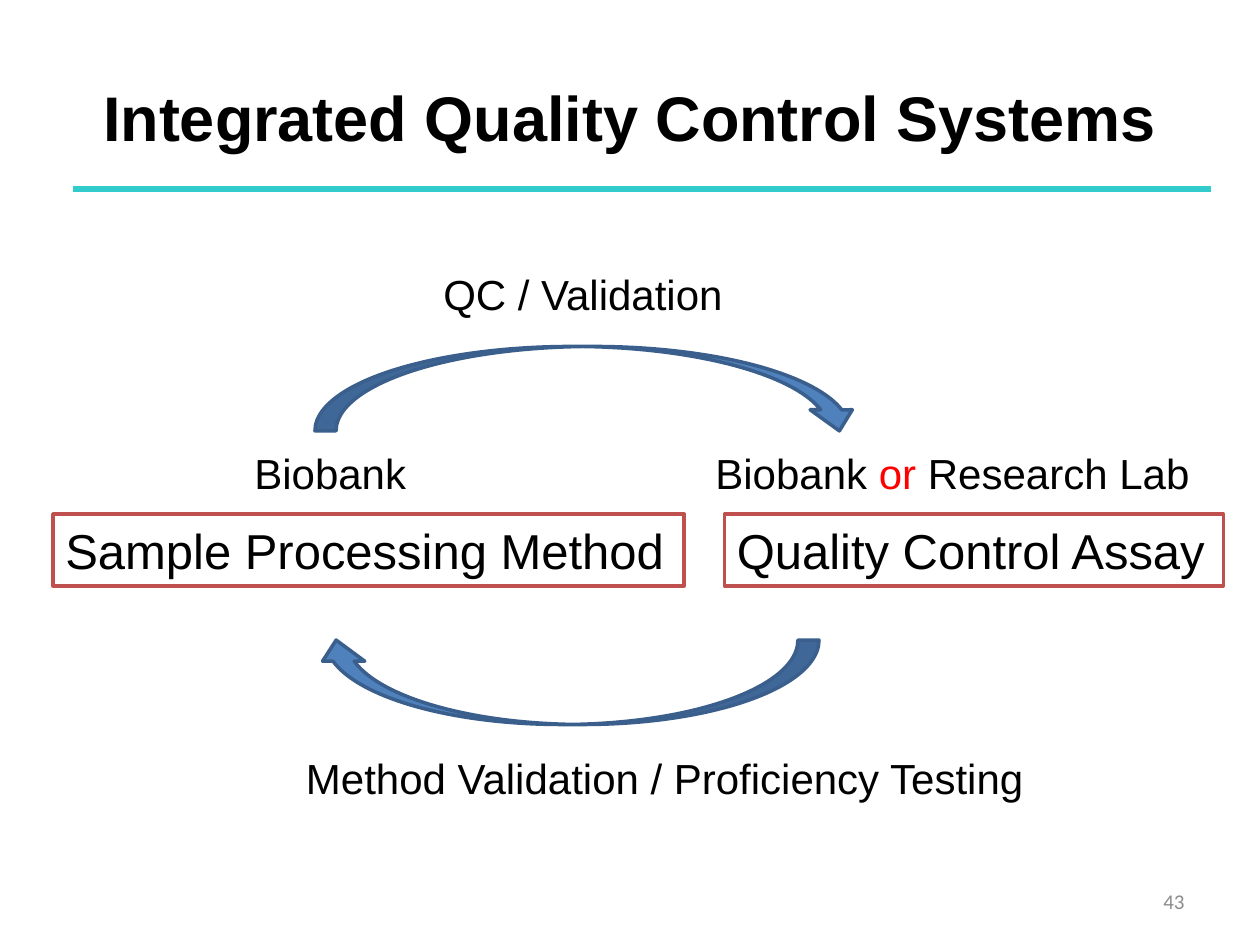
from typing import NamedTuple

from lxml import etree
from pptx import Presentation
from pptx.dml.color import RGBColor
from pptx.enum import shapes, text
from pptx.oxml.ns import qn
from pptx.util import Inches, Pt

COLORS = {
    "black": "000000", "white": "FFFFFF", "red": "FF0000", "gray": "8C8C8C",
    "rule": "33CCCC", "frame": "C0504D", "arrow": "4F81BD", "arrow_edge": "3A5F8C",
}


class Run(NamedTuple):
    text: str
    color: str = "black"


class Label(NamedTuple):
    box: tuple[float, float, float, float]
    runs: list[Run]
    size: int = 24
    font: str = "Arial"
    bold: bool = False
    align: text.PP_ALIGN = text.PP_ALIGN.LEFT
    anchor: text.MSO_ANCHOR = text.MSO_ANCHOR.TOP
    wrap: bool = False
    framed: bool = False


class Arrow(NamedTuple):
    box: tuple[float, float, float, float]
    rotation: int = 0


def rgb(name: str) -> RGBColor:
    return RGBColor.from_string(COLORS[name])


def paint(sp, fill: str, line: str) -> None:
    sp.shadow.inherit = False
    sp.fill.solid()
    sp.fill.fore_color.rgb = rgb(fill)
    sp.line.color.rgb = rgb(line)
    sp.line.width = Pt(2)


def add_label(s, label: Label) -> None:
    box = [Inches(v) for v in label.box]
    if label.framed:
        sp = s.shapes.add_shape(shapes.MSO_SHAPE.RECTANGLE, *box)
        paint(sp, "white", "frame")
    else:
        sp = s.shapes.add_textbox(*box)
    tf = sp.text_frame
    tf.word_wrap = label.wrap
    if not label.wrap:
        tf.auto_size = text.MSO_AUTO_SIZE.SHAPE_TO_FIT_TEXT
    tf.vertical_anchor = label.anchor
    p = tf.paragraphs[0]
    p.alignment = label.align
    for run in label.runs:
        r = p.add_run()
        r.text = run.text
        r.font.name = label.font
        r.font.size = Pt(label.size)
        r.font.bold = label.bold
        r.font.color.rgb = rgb(run.color)


def add_arrow(s, arrow: Arrow) -> None:
    sp = s.shapes.add_shape(shapes.MSO_SHAPE.CURVED_DOWN_ARROW,
                            *[Inches(v) for v in arrow.box])
    paint(sp, "arrow", "arrow_edge")
    sp.rotation = arrow.rotation


def add_rule(s, left: float, right: float, y: float) -> None:
    line = s.shapes.add_connector(shapes.MSO_CONNECTOR.STRAIGHT,
                                  Inches(left), Inches(y), Inches(right), Inches(y))
    line.line.color.rgb = rgb("rule")
    line.line.width = Pt(4)
    etree.SubElement(line._element.spPr, qn("a:effectLst"))


HEADINGS = [
    Label((0.5, 0.3, 9, 1.25), [Run("Integrated Quality Control Systems")], 36, bold=True,
          align=text.PP_ALIGN.CENTER, anchor=text.MSO_ANCHOR.MIDDLE, wrap=True),
    Label((7.17, 6.95, 2.33, 0.4), [Run("43", "gray")], 12, "Calibri",
          align=text.PP_ALIGN.RIGHT, anchor=text.MSO_ANCHOR.MIDDLE, wrap=True),
]
METHODS = [
    Label((0.42, 4.08, 5.01, 0.57), [Run("Sample Processing Method")], 28, framed=True),
    Label((5.75, 4.08, 3.96, 0.57), [Run("Quality Control Assay")], 28, framed=True),
]
ARROWS = [Arrow((2.5, 2.75, 4.33, 0.67)), Arrow((2.5, 5.08, 4, 0.67), 180)]
CAPTIONS = [
    Label((1.92, 3.5, 1.42, 0.5), [Run("Biobank")]),
    Label((5.58, 3.5, 4, 0.5), [Run("Biobank "), Run("or ", "red"), Run("Research Lab")]),
    Label((3.42, 2.08, 2.44, 0.5), [Run("QC / Validation")]),
    Label((2.33, 5.92, 5.96, 0.5), [Run("Method Validation / Proficiency Testing")]),
]


def main() -> None:
    prs = Presentation()
    prs.slide_width, prs.slide_height = Inches(10), Inches(7.5)
    s = prs.slides.add_slide(prs.slide_layouts[6])

    # Title, page number and framed methods
    for label in HEADINGS + METHODS:
        add_label(s, label)
    # Cycle between the methods
    for arrow in ARROWS:
        add_arrow(s, arrow)
    for label in CAPTIONS:
        add_label(s, label)
    # Rule under the title
    add_rule(s, 0.58, 9.61, 1.5)

    prs.save("out.pptx")


if __name__ == "__main__":
    main()
